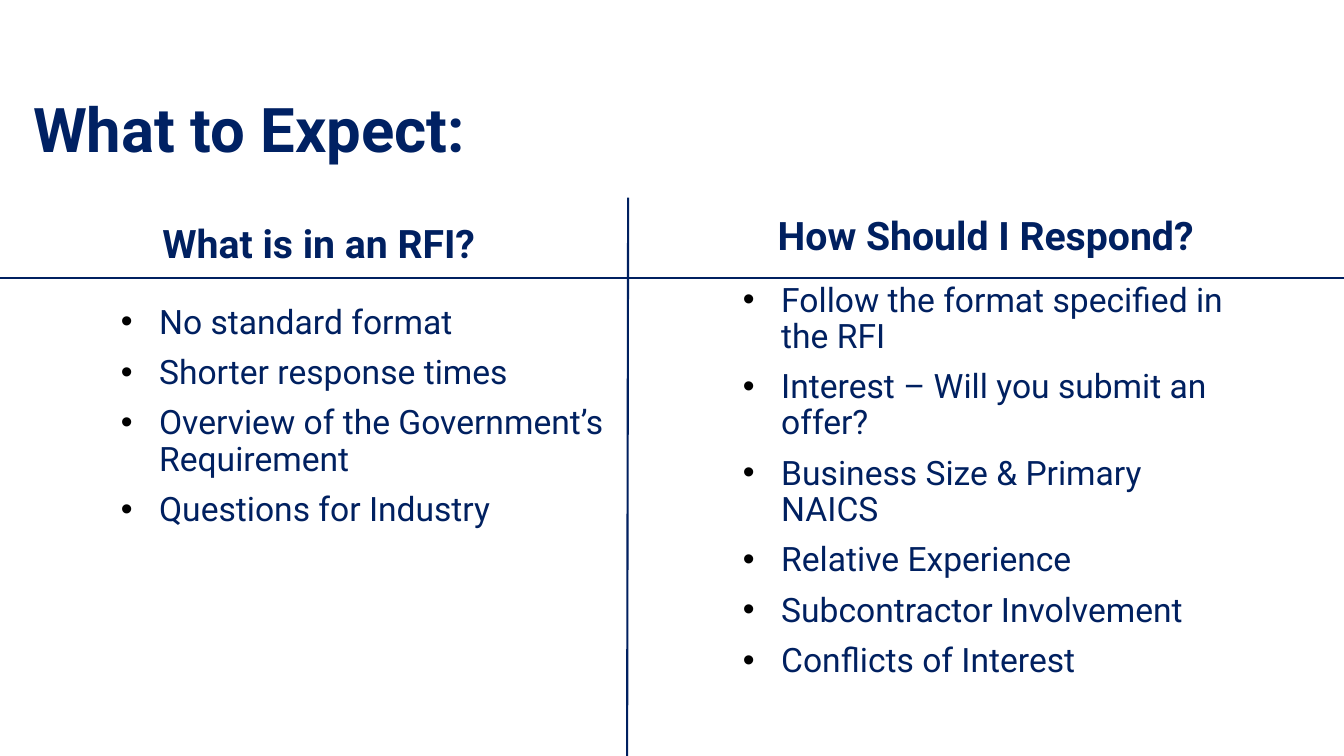
from lxml.etree import SubElement
from pptx import Presentation
from pptx.dml.color import RGBColor
from pptx.enum.shapes import MSO_CONNECTOR
from pptx.enum.text import PP_ALIGN
from pptx.oxml.ns import qn
from pptx.util import Inches, Pt

NAVY = RGBColor(0x00, 0x20, 0x60)
TITLE_NAVY = RGBColor(0x00, 0x21, 0x63)
BULLET_BLACK = RGBColor(0x00, 0x00, 0x00)

# heading, heading box, heading line spacing, list box, list items
COLUMNS = [
    ("What is in an RFI?", (0.64, 2.22, 4.79, 0.66), 0.8, (0.98, 2.98, 5.21, 3.5), [
        "No standard format",
        "Shorter response times",
        "Overview of the Government’s Requirement",
        "Questions for Industry",
    ]),
    ("How Should I Respond?", (7.24, 2.1, 4.82, 0.66), 0.9, (7.15, 2.76, 5.21, 4.44), [
        "Follow the format specified in the RFI",
        "Interest – Will you submit an offer?",
        "Business Size & Primary NAICS",
        "Relative Experience",
        "Subcontractor Involvement",
        "Conflicts of Interest",
    ]),
]
DIVIDERS = [(0, 2.76, 13.33, 2.76), (6.23, 1.96, 6.22, 7.5)]

presentation = Presentation()
presentation.slide_width = Inches(13.33)
presentation.slide_height = Inches(7.5)
slide = presentation.slides.add_slide(presentation.slide_layouts[6])


def add_text(box, lines, size, color, bold=False, spacing=1.0, hanging=0, bulleted=False):
    """Add a text box with one paragraph per line and return its text frame."""
    text_frame = slide.shapes.add_textbox(*map(Inches, box)).text_frame
    text_frame.word_wrap = True
    for index, line in enumerate(lines):
        paragraph = text_frame.paragraphs[0] if index == 0 else text_frame.add_paragraph()
        paragraph.text = line
        properties = paragraph._p.get_or_add_pPr()
        if hanging:
            properties.set("marL", str(Inches(0.5)))
            properties.set("indent", str(-Inches(hanging)))
        if bulleted:
            bullet_color = SubElement(properties, qn("a:buClr"))
            SubElement(bullet_color, qn("a:srgbClr"), val=str(BULLET_BLACK))
            SubElement(properties, qn("a:buFont"), typeface="Arial")
            SubElement(properties, qn("a:buChar"), char="•")
        paragraph.line_spacing = spacing
        if index:
            paragraph.space_before = Pt(10)
        font = paragraph.font
        font.name = "Roboto"
        font.size = Pt(size)
        font.bold = bold
        font.color.rgb = color
    return text_frame


title_frame = add_text((0.23, 0.8, 6.44, 0.94), ["What to Expect:"], 44, TITLE_NAVY, bold=True)
title_frame.margin_top = title_frame.margin_bottom = Inches(0.1)

for heading, heading_box, heading_spacing, list_box, items in COLUMNS:
    heading_frame = add_text(heading_box, [heading], 28, NAVY, bold=True,
                             spacing=heading_spacing, hanging=0.25)
    heading_frame.paragraphs[0].alignment = PP_ALIGN.CENTER
    add_text(list_box, items, 24, NAVY, spacing=0.9, hanging=0.38, bulleted=True)

for ends in DIVIDERS:
    divider = slide.shapes.add_connector(MSO_CONNECTOR.STRAIGHT, *map(Inches, ends))
    divider.line.color.rgb = NAVY
    divider.line.width = Pt(1.5)
    SubElement(divider._element.spPr, qn("a:effectLst"))

presentation.save("out.pptx")
